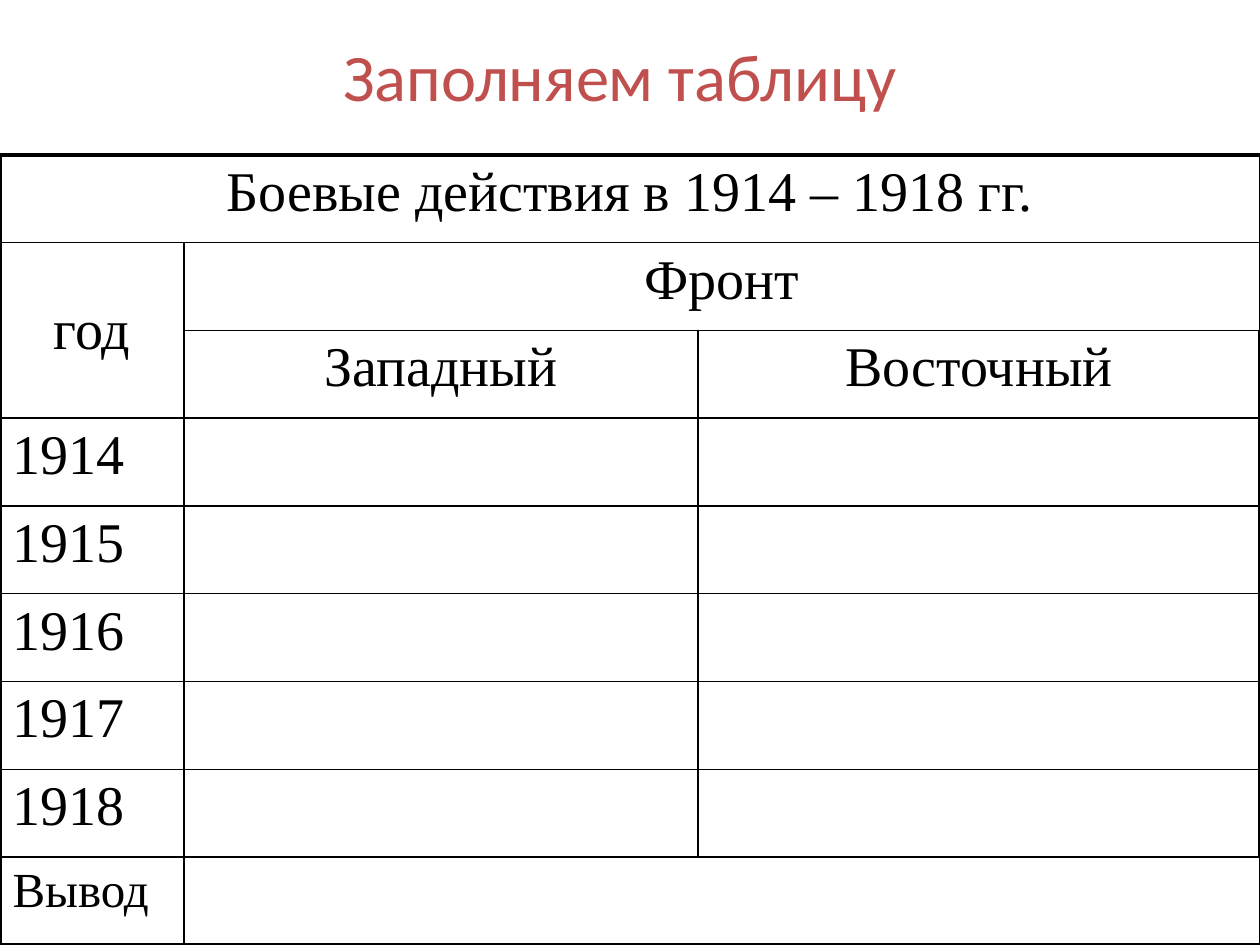
"""Build a slide with a blank table of the military actions of 1914–1918."""
from lxml.etree import SubElement
from pptx import Presentation
from pptx.dml.color import RGBColor
from pptx.enum.text import MSO_ANCHOR as Anchor, PP_ALIGN as Align
from pptx.oxml.ns import qn
from pptx.util import Inches, Pt

WIDTHS = [1.46, 4.08, 4.46]
ROW_HEIGHT = 6.27 / 9
YEARS = ["1914", "1915", "1916", "1917", "1918"]
MERGES = [((0, 0), (0, 2)), ((1, 0), (2, 0)), ((1, 1), (1, 2)), ((8, 1), (8, 2))]
HEADINGS = [
    (0, 0, "Боевые действия в 1914 – 1918 гг."),
    (1, 0, "год"),
    (1, 1, "Фронт"),
    (2, 1, "Западный"),
    (2, 2, "Восточный"),
]


def color(value):
    return RGBColor.from_string(value)


class SlideBuilder:
    ink = "000000"
    accent = "C0504D"
    title_font = "Calibri"
    table_font = "Times New Roman"
    thin, thick = 1, 2.25

    def __init__(self, deck):
        self.page = deck.slides.add_slide(deck.slide_layouts[5])

    def add_text(self, para, text, size, font, ink, align):
        para.alignment = align
        span = para.add_run()
        span.text = text
        span.font.size = Pt(size)
        span.font.name = font
        span.font.color.rgb = color(ink)

    def title(self, text, left, top, width, height):
        box = self.page.shapes.title
        box.left, box.top = Inches(left), Inches(top)
        box.width, box.height = Inches(width), Inches(height)
        frame = box.text_frame
        frame.vertical_anchor = Anchor.MIDDLE
        self.add_text(frame.paragraphs[0], text, 38, self.title_font, self.accent, Align.CENTER)

    def border(self, cell, side, width):
        line = SubElement(cell._tc.get_or_add_tcPr(), qn(f"a:ln{side}"), w=str(Pt(width)))
        fill = SubElement(line, qn("a:solidFill"))
        SubElement(fill, qn("a:srgbClr"), val=self.ink)

    def table(self, top, widths, row_count, row_height, merges):
        frame = self.page.shapes.add_table(
            row_count, len(widths), 0, Inches(top),
            Inches(sum(widths)), Inches(row_count * row_height))
        grid = frame.table
        grid.first_row = grid.horz_banding = False
        for column, width in zip(grid.columns, widths):
            column.width = Inches(width)
        for row in grid.rows:
            row.height = Inches(row_height)
        for start, end in merges:
            grid.cell(*start).merge(grid.cell(*end))
        for r in range(row_count):
            for c in range(len(widths)):
                cell = grid.cell(r, c)
                outer = {"L": c == 0, "R": c == len(widths) - 1,
                         "T": r == 0, "B": r == row_count - 1}
                for side, is_outer in outer.items():
                    self.border(cell, side, self.thick if is_outer else self.thin)
                cell.fill.background()
        return grid

    def label(self, cell, text, size=32, align=Align.CENTER, anchor=Anchor.TOP):
        cell.vertical_anchor = anchor
        para = cell.text_frame.paragraphs[0]
        self.add_text(para, text, size, self.table_font, self.ink, align)
        spacing = SubElement(para._p.get_or_add_pPr(), qn("a:spcBef"))
        SubElement(spacing, qn("a:spcPct"), val="20000")


def main():
    deck = Presentation()
    deck.slide_width, deck.slide_height = Inches(10), Inches(7.5)
    builder = SlideBuilder(deck)
    builder.title("Заполняем таблицу", 0.67, 0.21, 8.5, 0.77)
    grid = builder.table(1.23, WIDTHS, 9, ROW_HEIGHT, MERGES)
    for row, column, text in HEADINGS:
        cell = grid.cell(row, column)
        anchor = Anchor.MIDDLE if cell.span_height > 1 else Anchor.TOP
        builder.label(cell, text, anchor=anchor)
    for row, year in enumerate(YEARS, start=3):
        builder.label(grid.cell(row, 0), year, align=Align.LEFT)
    builder.label(grid.cell(8, 0), "Вывод", 28, Align.LEFT)
    deck.save("out.pptx")


if __name__ == "__main__":
    main()
